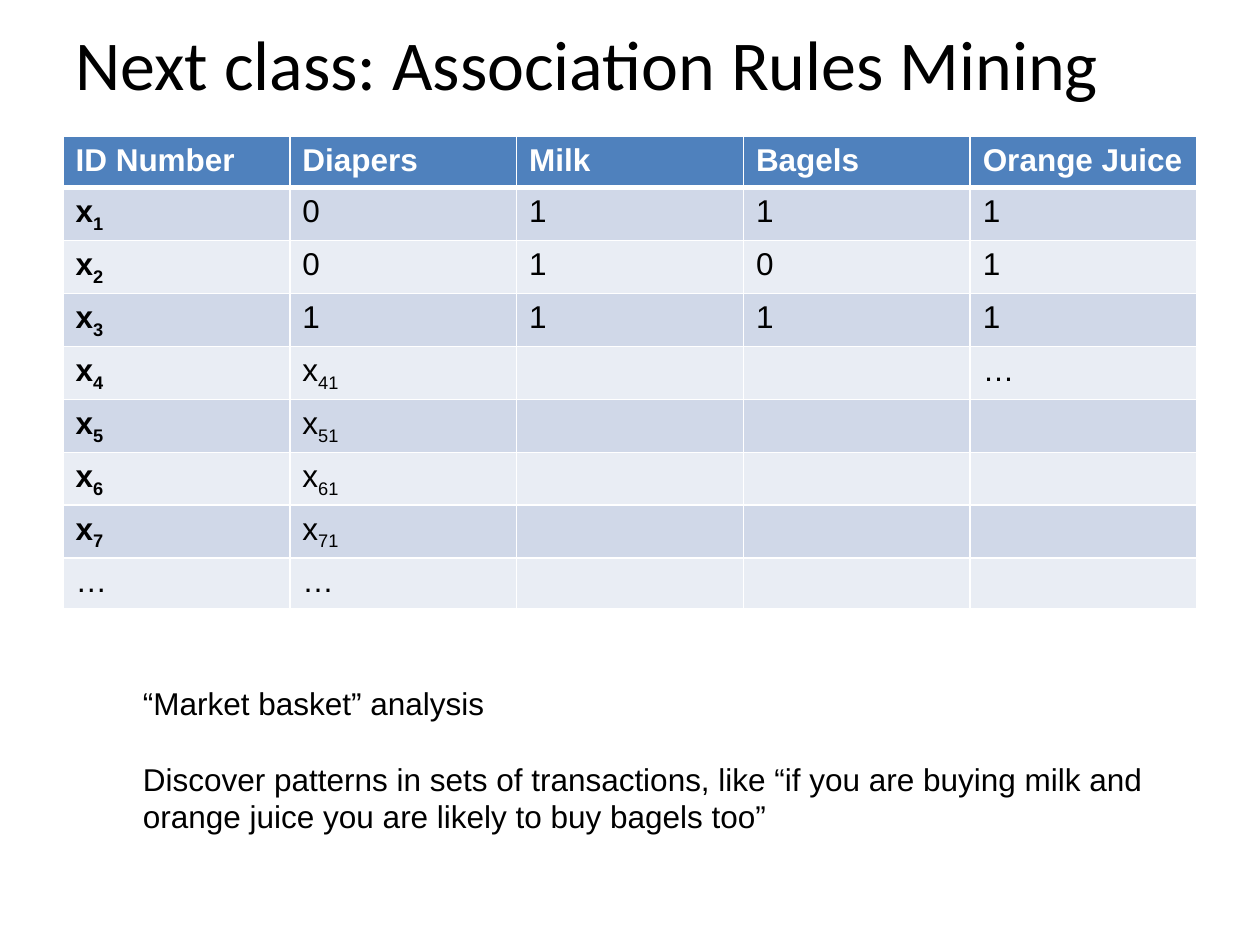
from dataclasses import dataclass

from lxml.etree import SubElement
from pptx import Presentation
from pptx.dml.color import RGBColor
from pptx.enum.text import MSO_ANCHOR, PP_ALIGN
from pptx.oxml.ns import qn
from pptx.util import Pt

COLORS = {
    "header": "4F81BD",
    "odd_row": "D0D8E8",
    "even_row": "E9EDF4",
    "white": "FFFFFF",
    "black": "000000",
}


@dataclass(frozen=True)
class Entry:
    """Content of one table cell, with an optional subscript."""
    text: str = ""
    subscript: str = ""
    bold: bool = False


HEADINGS = ["ID Number", "Diapers", "Milk", "Bagels", "Orange Juice"]
PURCHASES = ["0111", "0101", "1111"]
FIRST_UNKNOWN, LAST_UNKNOWN = 4, 7
COLUMN_WIDTH, ROW_HEIGHT = 129.6, 29.2


def color(key: str) -> RGBColor:
    return RGBColor.from_string(COLORS[key])


def style(paragraph, size: float, font: str = "Arial", ink: str = "black",
          bold: bool = False) -> None:
    paragraph.font.size = Pt(size)
    paragraph.font.name = font
    paragraph.font.bold = bold
    paragraph.font.color.rgb = color(ink)


def basket_rows() -> list[list[Entry]]:
    rows = [[Entry(name, bold=True) for name in HEADINGS]]
    for number, bought in enumerate(PURCHASES, 1):
        rows.append([Entry("x", str(number), True), *map(Entry, bought)])
    for number in range(FIRST_UNKNOWN, LAST_UNKNOWN + 1):
        last = Entry("…" if number == FIRST_UNKNOWN else "")
        rows.append([Entry("x", str(number), True), Entry("x", f"{number}1"),
                     Entry(), Entry(), last])
    rows.append([Entry("…"), Entry("…"), Entry(), Entry(), Entry()])
    return rows


def set_borders(cell, top: float, bottom: float) -> None:
    """White cell borders; they must stand before the fill in tcPr."""
    properties = cell._tc.get_or_add_tcPr()
    widths = {"a:lnL": 1, "a:lnR": 1, "a:lnT": top, "a:lnB": bottom}
    for position, (tag, width) in enumerate(widths.items()):
        line = properties.makeelement(qn(tag), {"w": str(Pt(width))})
        fill = SubElement(line, qn("a:solidFill"))
        SubElement(fill, qn("a:srgbClr"), val=COLORS["white"])
        properties.insert(position, line)


def fill_cell(cell, entry: Entry, row: int) -> None:
    band = "header" if row == 0 else "odd_row" if row % 2 else "even_row"
    cell.fill.solid()
    cell.fill.fore_color.rgb = color(band)
    set_borders(cell, top=3 if row == 1 else 1, bottom=3 if row == 0 else 1)
    paragraph = cell.text_frame.paragraphs[0]
    style(paragraph, 18, ink="black" if row else "white", bold=entry.bold)
    if entry.text:
        paragraph.add_run().text = entry.text
    if entry.subscript:
        index = paragraph.add_run()
        index.text = entry.subscript
        index._r.get_or_add_rPr().set("baseline", "-25000")


def add_title(slide, text: str) -> None:
    title = slide.shapes.title
    title.left, title.top, title.width, title.height = Pt(36), Pt(0), Pt(648), Pt(72)
    title.text_frame.text = text
    title.text_frame.vertical_anchor = MSO_ANCHOR.MIDDLE
    heading = title.text_frame.paragraphs[0]
    heading.alignment = PP_ALIGN.LEFT
    style(heading, 40, "Calibri")


def add_baskets(slide) -> None:
    rows = basket_rows()
    table = slide.shapes.add_table(
        len(rows), len(HEADINGS), Pt(36), Pt(78),
        Pt(COLUMN_WIDTH * len(HEADINGS)), Pt(ROW_HEIGHT * len(rows))).table
    for row, entries in enumerate(rows):
        table.rows[row].height = Pt(ROW_HEIGHT)
        for column, entry in enumerate(entries):
            fill_cell(table.cell(row, column), entry, row)


def add_explanation(slide, lines: list[str]) -> None:
    frame = slide.shapes.add_textbox(Pt(74.6), Pt(387.5), Pt(591), Pt(116.5)).text_frame
    frame.word_wrap = True
    frame.text = "\n".join(lines)
    for paragraph in frame.paragraphs:
        style(paragraph, 18)
    frame.paragraphs[-1].space_before = Pt(21.5)


def main() -> None:
    deck = Presentation()
    deck.slide_width, deck.slide_height = Pt(720), Pt(540)
    slide = deck.slides.add_slide(deck.slide_layouts.get_by_name("Title Only"))
    add_title(slide, "Next class: Association Rules Mining")
    add_baskets(slide)
    add_explanation(slide, [
        "“Market basket” analysis",
        "Discover patterns in sets of transactions, like “if you are buying milk "
        "and orange juice you are likely to buy bagels too”",
    ])
    deck.save("out.pptx")


if __name__ == "__main__":
    main()
